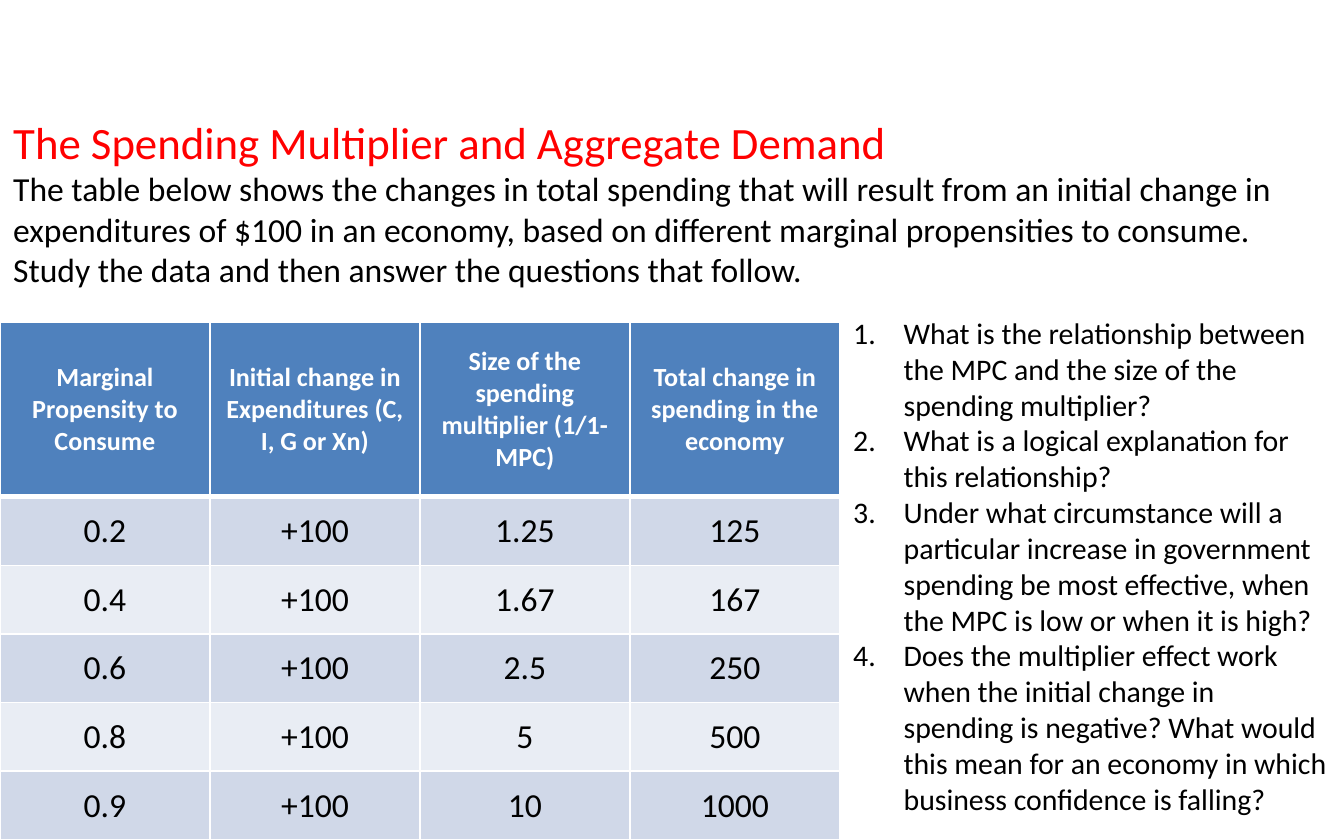
from lxml.etree import SubElement
from pptx import Presentation
from pptx.dml.color import RGBColor as RGB
from pptx.enum.text import MSO_ANCHOR as ANCHOR, MSO_AUTO_SIZE as AUTOSIZE, PP_ALIGN as ALIGN
from pptx.oxml.ns import qn
from pptx.util import Pt

PX = 9525
COLORS = {
    "text": "000000",
    "title": "FF0000",
    "header": "4F81BD",
    "band_dark": "D0D8E8",
    "band_light": "E9EDF4",
    "white": "FFFFFF",
}
HEADERS = [
    "Marginal Propensity to Consume",
    "Initial change in Expenditures (C, I, G or Xn)",
    "Size of the spending multiplier (1/1-MPC)",
    "Total change in spending in the economy",
]
ROWS = [
    ("0.2", "+100", "1.25", "125"),
    ("0.4", "+100", "1.67", "167"),
    ("0.6", "+100", "2.5", "250"),
    ("0.8", "+100", "5", "500"),
    ("0.9", "+100", "10", "1000"),
]
INTRO = (
    "The table below shows the changes in total spending that will result from an initial "
    "change in expenditures of $100 in an economy, based on different marginal propensities "
    "to consume. Study the data and then answer the questions that follow."
)
QUESTIONS = [
    "What is the relationship between the MPC and the size of the spending multiplier?",
    "What is a logical explanation for this relationship?",
    "Under what circumstance will a particular increase in government spending be most "
    "effective, when the MPC is low or when it is high?",
    "Does the multiplier effect work when the initial change in spending is negative? "
    "What would this mean for an economy in which business confidence is falling?",
]


def px(*lengths):
    return [n * PX for n in lengths]


def write(p, text, size=18, color="text", bold=False, align=ALIGN.LEFT, font="Calibri"):
    p.alignment = align
    r = p.add_run()
    r.text = text
    r.font.name = font
    r.font.size = Pt(size)
    r.font.bold = bold
    r.font.color.rgb = RGB.from_string(COLORS[color])


def number(p, indent):
    pPr = p._p.get_or_add_pPr()
    pPr.set("marL", str(indent * PX))
    pPr.set("indent", str(-indent * PX))
    SubElement(pPr, qn("a:buFont"), typeface="+mj-lt")
    SubElement(pPr, qn("a:buAutoNum"), type="arabicPeriod")


def border(cell, color, **widths):
    tcPr = cell._tc.get_or_add_tcPr()
    for i, side in enumerate("LRTB"):
        ln = SubElement(tcPr, qn(f"a:ln{side}"), w=str(Pt(widths.get(side, 1))))
        fill = SubElement(ln, qn("a:solidFill"))
        SubElement(fill, qn("a:srgbClr"), val=COLORS[color])
        tcPr.insert(i, ln)


class Deck:
    def __init__(self, width, height):
        self.prs = Presentation()
        self.prs.slide_width, self.prs.slide_height = px(width, height)
        self.s = self.prs.slides.add_slide(self.prs.slide_layouts[6])

    def text(self, box, items, indent=0):
        tf = self.s.shapes.add_textbox(*px(*box)).text_frame
        tf.word_wrap = True
        tf.auto_size = AUTOSIZE.SHAPE_TO_FIT_TEXT
        for i, (text, style) in enumerate(items):
            p = tf.add_paragraph() if i else tf.paragraphs[0]
            write(p, text, **style)
            if indent:
                number(p, indent)

    def cell(self, cell, text, fill, bottom=1, **style):
        cell.fill.solid()
        cell.fill.fore_color.rgb = RGB.from_string(COLORS[fill])
        cell.vertical_anchor = ANCHOR.MIDDLE
        write(cell.text_frame.paragraphs[0], text, align=ALIGN.CENTER, **style)
        border(cell, "white", B=bottom)

    def table(self, left, top, col_width, header_height, row_height, headers, rows):
        size = col_width * len(headers), header_height + row_height * len(rows)
        table = self.s.shapes.add_table(
            len(rows) + 1, len(headers), *px(left, top, *size)).table
        for col in table.columns:
            col.width = col_width * PX
        for i, row in enumerate(table.rows):
            row.height = (row_height if i else header_height) * PX
        for j, text in enumerate(headers):
            self.cell(table.cell(0, j), text, "header", bottom=3,
                      size=14, color="white", bold=True)
        for i, values in enumerate(rows, 1):
            band = "band_dark" if i % 2 else "band_light"
            for j, text in enumerate(values):
                self.cell(table.cell(i, j), text, band)


def main():
    deck = Deck(960, 600)
    deck.text((0, 77, 960, 135), [
        ("The Spending Multiplier and Aggregate Demand", {"size": 24, "color": "title"}),
        (INTRO, {"size": 18}),
    ])
    deck.table(0, 230, 150, 125, 49, HEADERS, ROWS)
    deck.text((600, 220, 360, 372), [(q, {"size": 16}) for q in QUESTIONS], indent=36)
    deck.prs.save("out.pptx")


if __name__ == "__main__":
    main()
